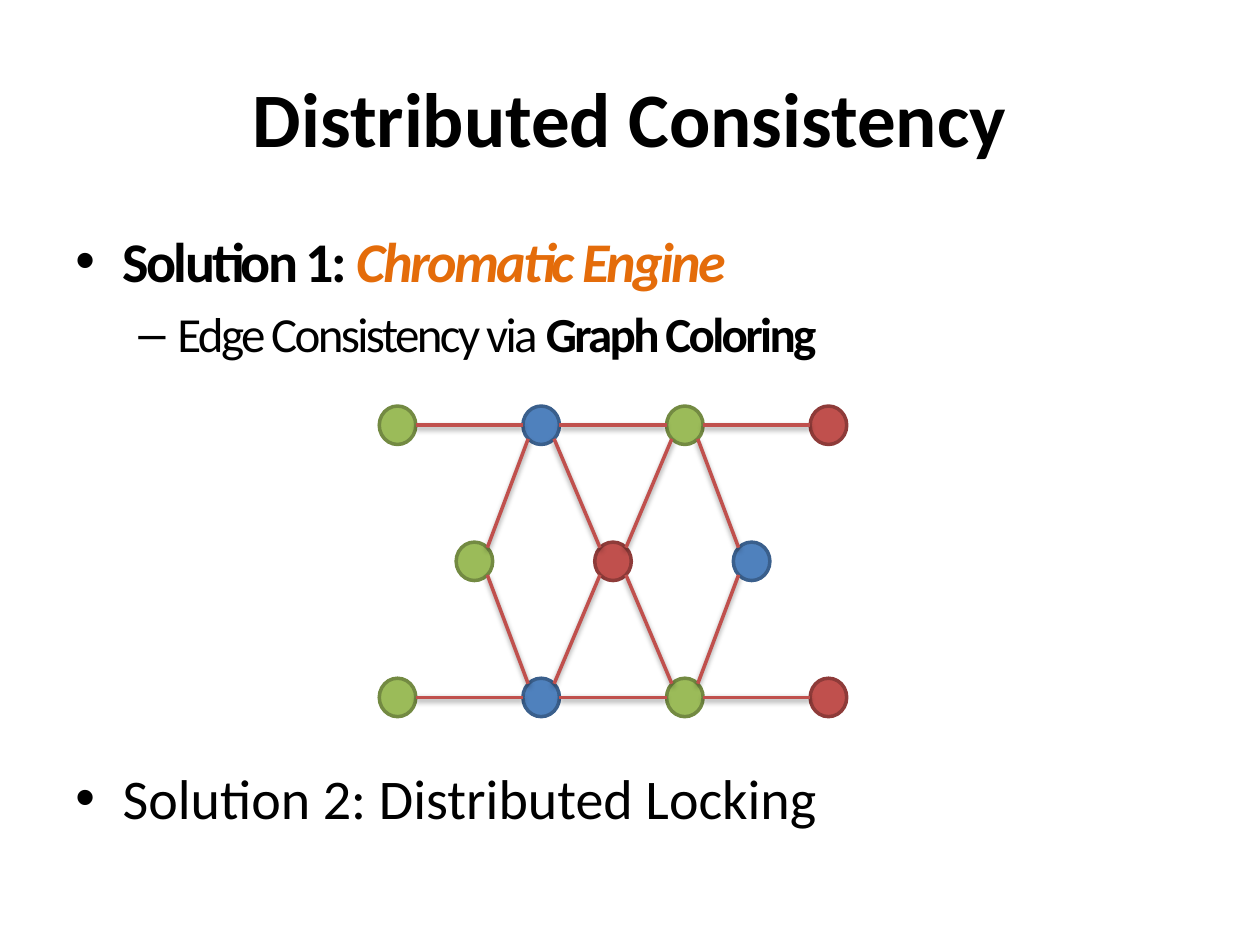
import pptx
import pptx.util
import pptx.dml.color
import pptx.enum.shapes
import pptx.enum.text
import pptx.oxml
import pptx.oxml.ns

COLORS = {
    "text": "000000", "accent": "E46C0A",
    "green": "9BBB59", "green_line": "738A42",
    "red": "C0504D", "red_line": "8E3B39",
    "blue": "4F81BD", "blue_line": "3A5F8C",
}
CELL = 0.1  # inches: the slide is a grid of 100 columns by 75 rows
NODE_W, NODE_H = 2.9, 3.05
EDGE_SHADOW = (
    '<a:effectLst %s><a:outerShdw blurRad="39370" dist="20320" dir="5400000" rotWithShape="0">'
    '<a:srgbClr val="000000"><a:alpha val="38000"/></a:srgbClr></a:outerShdw></a:effectLst>'
    % pptx.oxml.ns.nsdecls("a"))


def rgb(name):
    return pptx.dml.color.RGBColor.from_string(COLORS[name])


def grid(*cells):
    return [pptx.util.Inches(c * CELL) for c in cells]


class Deck:
    font = "Calibri"
    line_width = pptx.util.Pt(2)

    def __init__(self):
        self.prs = pptx.Presentation()
        self.prs.slide_width, self.prs.slide_height = grid(100, 75)
        self.s = self.prs.slides.add_slide(self.prs.slide_layouts[5])

    def run(self, p, text, size, color="text", bold=False, italic=False, spacing=0):
        """Add a run; spacing is the letter spacing in points."""
        r = p.add_run()
        r.text = text
        f = r.font
        f.name, f.size, f.bold, f.italic = self.font, pptx.util.Pt(size), bold, italic
        f.color.rgb = rgb(color)
        if spacing:
            r._r.get_or_add_rPr().set("spc", str(round(spacing * 100)))

    def title(self, text, *box):
        sp = self.s.shapes.title
        sp.left, sp.top, sp.width, sp.height = grid(*box)
        tf = sp.text_frame
        tf.vertical_anchor = pptx.enum.text.MSO_ANCHOR.MIDDLE
        p = tf.paragraphs[0]
        p.alignment = pptx.enum.text.PP_ALIGN.CENTER
        self.run(p, text, 44, bold=True)

    def text_box(self, *box):
        tf = self.s.shapes.add_textbox(*grid(*box)).text_frame
        tf.word_wrap = True
        return tf

    def bullet(self, p, char, margin, hang, before, level=0):
        """Give a paragraph a hanging bullet and the space before it in points."""
        p.level = level
        p.space_before = pptx.util.Pt(before)
        pPr = p._p.get_or_add_pPr()
        left, indent = grid(margin, -hang)
        pPr.set("marL", str(left))
        pPr.set("indent", str(indent))
        for tag, key, value in (("buFont", "typeface", "Arial"), ("buChar", "char", char)):
            pPr.append(pptx.oxml.parse_xml(
                '<a:%s %s %s="%s"/>' % (tag, pptx.oxml.ns.nsdecls("a"), key, value)))

    def group(self):
        return self.s.shapes.add_group_shape().shapes

    def node(self, shapes, center, color):
        x, y = center
        sp = shapes.add_shape(pptx.enum.shapes.MSO_SHAPE.OVAL,
                              *grid(x - NODE_W / 2, y - NODE_H / 2, NODE_W, NODE_H))
        sp.shadow.inherit = False
        sp.fill.solid()
        sp.fill.fore_color.rgb = rgb(color)
        sp.line.color.rgb = rgb(color + "_line")
        sp.line.width = self.line_width

    def edge(self, shapes, start, end):
        """Join two nodes rim to rim: sideways in a row, else on the diagonals."""
        (x1, y1), (x2, y2) = start, end
        if y1 == y2:
            dx, dy = NODE_W / 2, 0
        else:
            dx, dy = NODE_W / 2 * 0.71, NODE_H / 2 * 0.71
        dx = dx if x2 > x1 else -dx
        dy = dy if y2 > y1 else -dy
        line = shapes.add_connector(pptx.enum.shapes.MSO_CONNECTOR.STRAIGHT,
                                    *grid(x1 + dx, y1 + dy, x2 - dx, y2 - dy))
        line.line.color.rgb = rgb("red")
        line.line.width = self.line_width
        line._element.spPr.append(pptx.oxml.parse_xml(EDGE_SHADOW))


def main():
    deck = Deck()
    deck.title("Distributed Consistency", 5, 3, 90, 12.5)

    tf = deck.text_box(5, 17.5, 90, 52.3)
    p = tf.paragraphs[0]
    deck.bullet(p, "•", 3.75, 3.75, 6.4)
    deck.run(p, "Solution 1: ", 32, bold=True, spacing=-1.5)
    deck.run(p, "Chromatic Engine", 32, "accent", bold=True, italic=True, spacing=-1.5)
    p = tf.add_paragraph()
    deck.bullet(p, "–", 8.1, 3.1, 5.6, level=1)
    deck.run(p, "Edge Consistency via ", 28, spacing=-1.5)
    deck.run(p, "Graph Coloring", 28, bold=True, spacing=-1.5)
    p = tf.add_paragraph()
    deck.bullet(p, "•", 3.75, 3.75, 229)  # leaves room for the graph
    deck.run(p, "Solution 2: Distributed Locking", 32)

    top, bottom = ([(31.55 + 11.4 * i, y) for i in range(4)] for y in (33.75, 55.35))
    middle = [(37.65 + 11 * i, 44.55) for i in range(3)]
    outer_colors = ("green", "blue", "green", "red")
    graph = deck.group()
    for row, colors in ((middle, ("green", "red", "blue")),
                        (bottom, outer_colors), (top, outer_colors)):
        for center, color in zip(row, colors):
            deck.node(graph, center, color)
    for row in (top, bottom):
        for start, end in zip(row, row[1:]):
            deck.edge(graph, start, end)
        for m, o in ((0, 1), (1, 1), (1, 2), (2, 2)):
            deck.edge(graph, middle[m], row[o])

    deck.prs.save("out.pptx")


if __name__ == "__main__":
    main()
